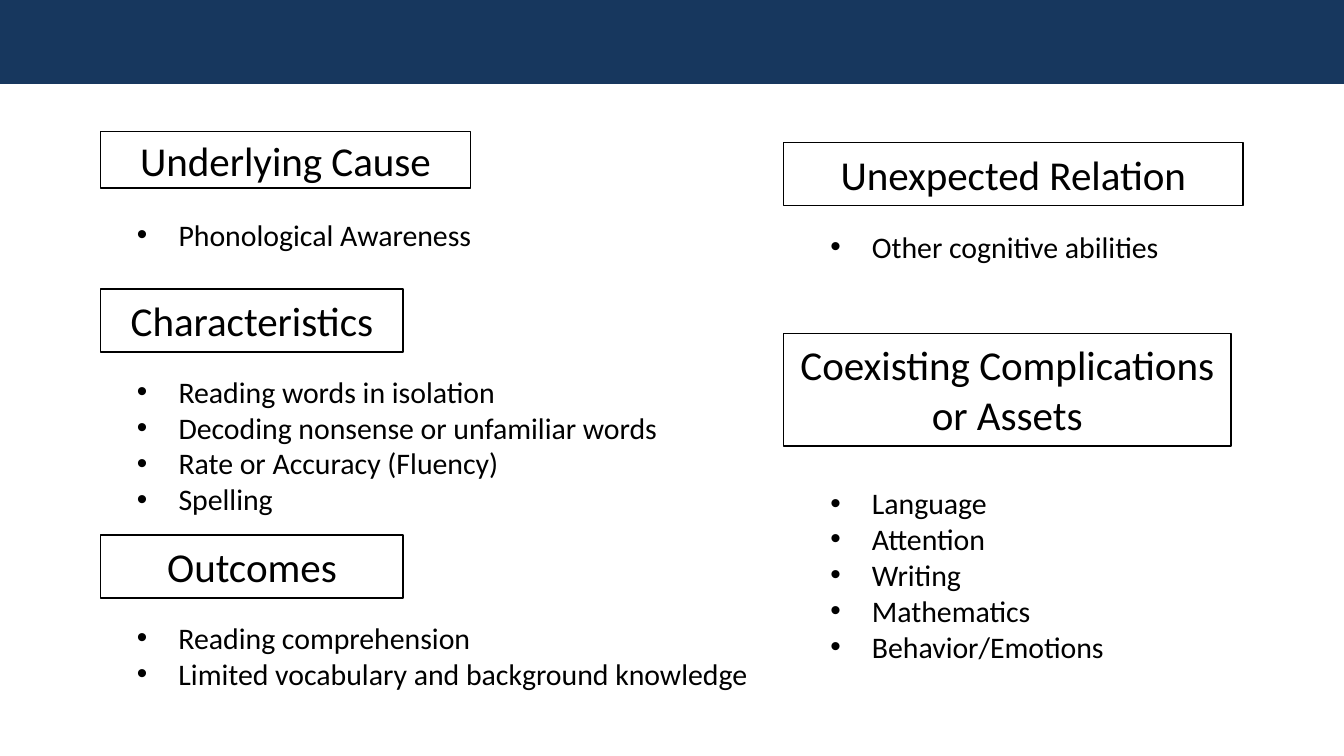
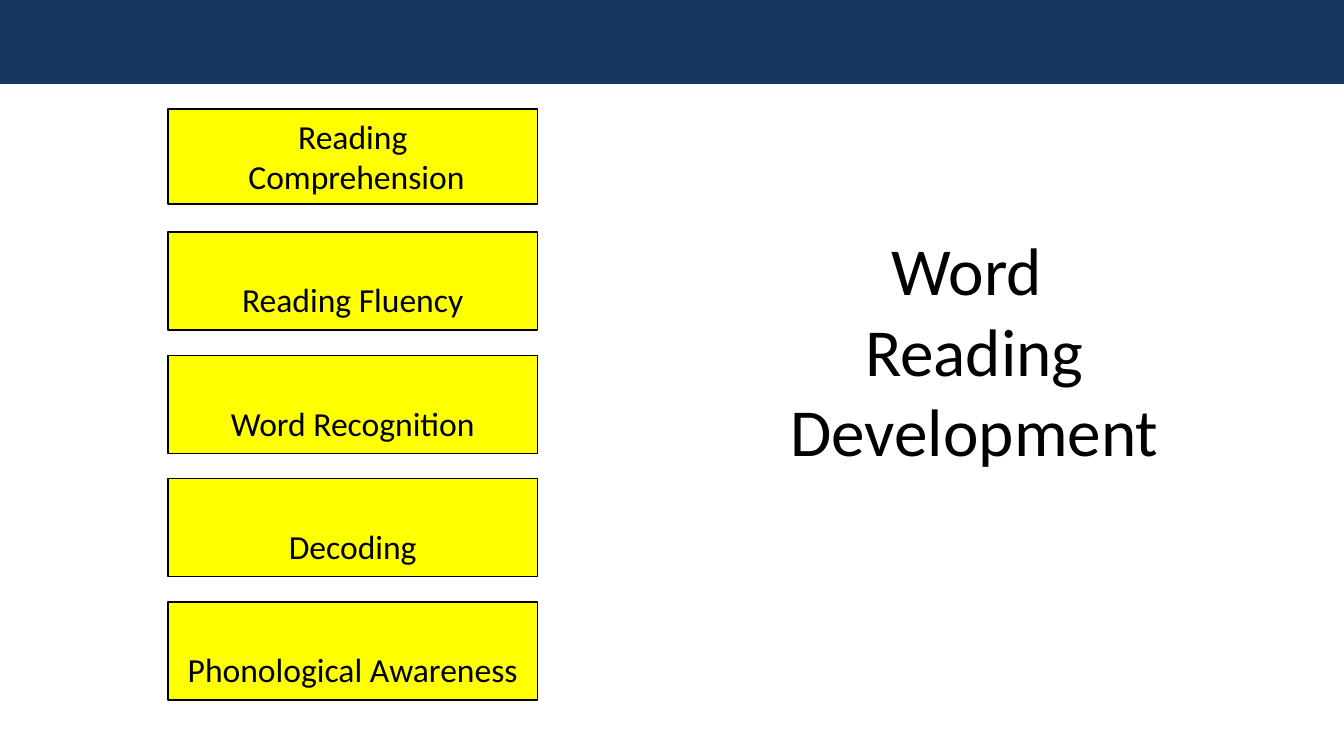
from copy import deepcopy

from lxml import etree
from pptx import Presentation
from pptx import util as u
from pptx.dml import color
from pptx.enum import shapes, text
from pptx.oxml import ns

COLORS = {"band": "17375E", "ink": "000000", "stage": "FFFF00"}
FONT = "Calibri"
LIST_INDENT = 0.31
SLIDE_WIDTH = 10
SLIDE_HEIGHT = SLIDE_WIDTH * 9 / 16
BAND_HEIGHT = SLIDE_HEIGHT / 9

LEFT_SECTIONS = [
    ("Characteristics", (0.75, 2.15, 2.25, 0.47), (0.92, 2.73, 5.08, 1.18),
     ["Reading words in isolation", "Decoding nonsense or unfamiliar words",
      "Rate or Accuracy (Fluency)", "Spelling"]),
    ("Outcomes", (0.75, 3.98, 2.25, 0.47), (0.92, 4.56, 5, 0.64),
     ["Reading comprehension", "Limited vocabulary and background knowledge"]),
]
RIGHT_SECTIONS = [
    ("Unexpected Relation", (5.83, 1.06, 3.42, 0.47), (6.08, 1.65, 3.33, 0.37),
     ["Other cognitive abilities"]),
    ("Coexisting Complications \nor Assets", (5.83, 2.48, 3.33, 0.84),
     (6.08, 3.56, 3.33, 1.45),
     ["Language", "Attention", "Writing", "Mathematics", "Behavior/Emotions"]),
]
STAGES = ["Reading Fluency", "Word Recognition", "Decoding", "Phonological Awareness"]


def rgb(name):
    """Return the named colour."""
    return color.RGBColor.from_string(COLORS[name])


def inches(box):
    """Convert left, top, width and height to lengths."""
    return [u.Inches(value) for value in box]


def add_bullet(paragraph):
    """Give a paragraph a hanging round bullet."""
    properties = paragraph._p.get_or_add_pPr()
    indent = u.Inches(LIST_INDENT)
    properties.set("marL", str(indent))
    properties.set("indent", str(-indent))
    etree.SubElement(properties, ns.qn("a:buFont"), typeface="Arial")
    etree.SubElement(properties, ns.qn("a:buChar"), char="•")


def write_text(shape, paragraphs, *, size, align=text.PP_ALIGN.CENTER,
               anchor=text.MSO_ANCHOR.TOP, margin=0.05, bulleted=False):
    """Fill a shape with formatted paragraphs."""
    frame = shape.text_frame
    frame.word_wrap = True
    frame.auto_size = text.MSO_AUTO_SIZE.NONE
    frame.vertical_anchor = anchor
    frame.margin_left = frame.margin_right = u.Inches(0.1)
    frame.margin_top = frame.margin_bottom = u.Inches(margin)
    for index, content in enumerate(paragraphs):
        paragraph = frame.add_paragraph() if index else frame.paragraphs[0]
        paragraph.text = content
        paragraph.alignment = align
        if bulleted:
            add_bullet(paragraph)
        for run in paragraph.runs:
            run.font.name = FONT
            run.font.size = u.Pt(size)
            run.font.color.rgb = rgb("ink")
        for line_break in paragraph._p.findall(ns.qn("a:br")):
            line_break.append(deepcopy(paragraph.runs[0]._r.rPr))


def outline(shape):
    """Draw the thin dark border used on all boxes."""
    shape.line.color.rgb = rgb("ink")
    shape.line.width = u.Pt(0.75)


def add_rectangle(slide, box, fill=None):
    """Add a rectangle without shadow, filled or clear."""
    shape = slide.shapes.add_shape(shapes.MSO_SHAPE.RECTANGLE, *inches(box))
    shape.shadow.inherit = False
    if fill:
        shape.fill.solid()
        shape.fill.fore_color.rgb = rgb(fill)
    else:
        shape.fill.background()
    return shape


def add_box(slide, box, paragraphs, *, fill=None, **text_format):
    """Add a bordered rectangle with text."""
    shape = add_rectangle(slide, box, fill)
    outline(shape)
    write_text(shape, paragraphs, **text_format)


def add_list(slide, box, items):
    """Add a bulleted list."""
    shape = slide.shapes.add_textbox(*inches(box))
    write_text(shape, items, size=16, align=text.PP_ALIGN.LEFT, bulleted=True)


def set_title(slide, box, content, size):
    """Place and format the title and return it."""
    title = slide.shapes.title
    title.left, title.top, title.width, title.height = inches(box)
    write_text(title, [content], size=size, anchor=text.MSO_ANCHOR.MIDDLE, margin=0.1)
    return title


def move_band_to_layout(slide):
    """Put the top band behind everything on the shared layout."""
    band = add_rectangle(slide, (0, 0, SLIDE_WIDTH, BAND_HEIGHT), "band")
    band.line.fill.background()
    slide.slide_layout.shapes.element.insert(2, band._element)


def build_profile(slide):
    """Build the overview of causes, traits and outcomes."""
    outline(set_title(slide, (0.75, 0.98, 2.75, 0.42), "Underlying Cause", 22))
    add_list(slide, (0.92, 1.56, 3.92, 0.37), ["Phonological Awareness"])
    for heading, heading_box, list_box, items in LEFT_SECTIONS + RIGHT_SECTIONS:
        add_box(slide, heading_box, heading.split("\n"), size=22)
        add_list(slide, list_box, items)


def build_development(slide):
    """Build the stack of reading stages."""
    set_title(slide, (5, 1.06, 4.5, 3.08), "Word \nReading Development", 36)
    left, top, width, last_top = 1.25, 0.81, 2.75, 4.48
    step = (last_top - top) / len(STAGES)
    add_box(slide, (left, top, width, 0.71), ["Reading", " Comprehension"],
            fill="stage", size=18)
    for index, stage in enumerate(STAGES, start=1):
        add_box(slide, (left, top + index * step, width, 0.73), [stage],
                fill="stage", size=18, anchor=text.MSO_ANCHOR.BOTTOM, margin=0.08)


def main():
    """Create and save the presentation."""
    presentation = Presentation()
    presentation.slide_width = u.Inches(SLIDE_WIDTH)
    presentation.slide_height = u.Inches(SLIDE_HEIGHT)
    title_only = presentation.slide_layouts[5]
    profile = presentation.slides.add_slide(title_only)
    move_band_to_layout(profile)
    build_profile(profile)
    build_development(presentation.slides.add_slide(title_only))
    presentation.save("out.pptx")


if __name__ == "__main__":
    main()
